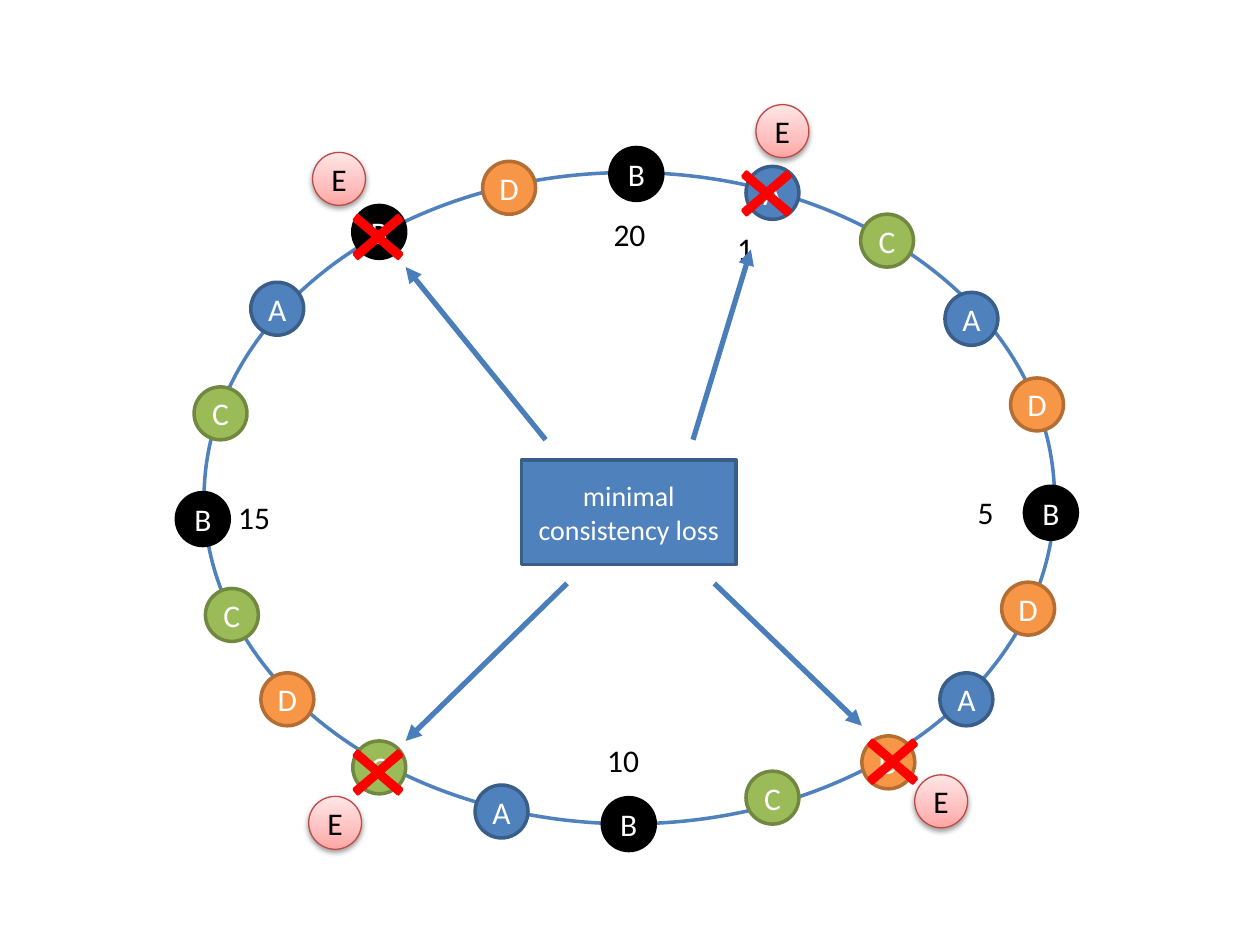
from copy import deepcopy
from typing import NamedTuple

from pptx import Presentation
from pptx import util as u
from pptx.dml.color import RGBColor
from pptx.enum import shapes, text
from pptx.oxml import ns, xmlchemy

WHITE = RGBColor(0xFF, 0xFF, 0xFF)
BLACK = RGBColor(0x00, 0x00, 0x00)
RED = RGBColor(0xFF, 0x00, 0x00)
BLUE = RGBColor(0x4F, 0x81, 0xBD)
BLUE_EDGE = RGBColor(0x3A, 0x5E, 0x8A)
GREEN = RGBColor(0x9B, 0xBB, 0x59)
GREEN_EDGE = RGBColor(0x71, 0x88, 0x41)
ORANGE = RGBColor(0xF7, 0x96, 0x46)
ORANGE_EDGE = RGBColor(0xB4, 0x6D, 0x33)
ARROW = RGBColor(0x4A, 0x7E, 0xBB)
PINK_EDGE = RGBColor(0xBE, 0x4B, 0x48)
PINK_STOPS = [
    (0, RGBColor(0xFF, 0xA5, 0xA3)),
    (0.35, RGBColor(0xFF, 0xBF, 0xBE)),
    (1, RGBColor(0xFF, 0xE6, 0xE6)),
]

FONT = "Calibri"
NODE_SIZE = 30.24
INSET = 3.6


class Node(NamedTuple):
    """A server or joining server, placed by its centre."""
    name: str
    x: float
    y: float


class Label(NamedTuple):
    """A ring position number, placed by its top left corner."""
    number: str
    left: float
    top: float
    width: float


class Arrow(NamedTuple):
    start: tuple[float, float]
    end: tuple[float, float]


NODE_COLORS = {
    "A": (BLUE, BLUE_EDGE),
    "B": (BLACK, BLACK),
    "C": (GREEN, GREEN_EDGE),
    "D": (ORANGE, ORANGE_EDGE),
}
# Clockwise from position 1
RING_NODES = [
    Node("A", 441.4, 110.2), Node("C", 506.9, 137.5), Node("A", 555.1, 182.2),
    Node("D", 592.6, 231.1), Node("B", 600.5, 293), Node("D", 587.5, 347.8),
    Node("A", 552.2, 399.6), Node("D", 507.6, 435.6), Node("C", 441.4, 455.8),
    Node("B", 359.3, 470.9), Node("A", 286.6, 463.7), Node("C", 216.7, 438.5),
    Node("D", 164.2, 399.6), Node("C", 132.5, 351.4), Node("B", 115.9, 296.6),
    Node("C", 126, 236.2), Node("A", 158.4, 176.4), Node("B", 216.7, 132.5),
    Node("D", 290.9, 107.3), Node("B", 363.6, 99.4),
]
LABELS = [
    Label("1", 417.6, 127.4, 17.3), Label("5", 555.1, 277.9, 17.3),
    Label("10", 343.4, 419.8, 27.4), Label("15", 132.5, 280.8, 27.4),
    Label("20", 347, 119.5, 27.4),
]
JOINING_NODES = [
    Node("E", 447.1, 74.9), Node("E", 537.8, 457.9),
    Node("E", 191.5, 470.2), Node("E", 193.7, 102.2),
]
CROSS_CENTRES = [(216, 135.4), (438.1, 110.5), (216, 441.4), (510.1, 435.2)]
HALF_CROSS = [(-13.6, -9.6), (-11.5, -12.2), (0, -2.2),
              (11.5, -12.2), (13.6, -9.6), (2.2, 0)]
CROSS = HALF_CROSS + [(-x, -y) for x, y in HALF_CROSS]
ARROWS = [
    Arrow((311.8, 251.3), (231.8, 152.6)), Arrow((396, 251.3), (429.1, 142.6)),
    Arrow((324, 333.4), (231.8, 423.4)), Arrow((408.2, 333.4), (492.5, 414.7)),
]


def add_child(parent, tag: str, **attributes: str):
    child = xmlchemy.OxmlElement(tag)
    for key, value in attributes.items():
        child.set(key, value)
    parent.append(child)
    return child


def write(shape, words: str, size: float, color: RGBColor,
          align=text.PP_ALIGN.CENTER, inset: float = INSET, wrap: bool = False) -> None:
    frame = shape.text_frame
    frame.text = words
    frame.word_wrap = wrap
    frame.margin_left = frame.margin_right = u.Pt(inset)
    frame.margin_top = frame.margin_bottom = u.Pt(inset)
    para = frame.paragraphs[0]
    para.alignment = align
    font = para.runs[0].font
    font.name, font.size, font.color.rgb = FONT, u.Pt(size), color


def paint(shape, fill: RGBColor, edge: RGBColor, width: float = 2) -> None:
    shape.shadow.inherit = False
    shape.fill.solid()
    shape.fill.fore_color.rgb = fill
    shape.line.color.rgb = edge
    shape.line.width = u.Pt(width)


def add_circle(page, node: Node, color: RGBColor):
    corner = u.Pt(node.x - NODE_SIZE / 2), u.Pt(node.y - NODE_SIZE / 2)
    circle = page.shapes.add_shape(
        shapes.MSO_SHAPE.OVAL, *corner, u.Pt(NODE_SIZE), u.Pt(NODE_SIZE))
    write(circle, node.name, 18, color, inset=0)
    circle.text_frame.vertical_anchor = text.MSO_ANCHOR.MIDDLE
    return circle


def add_joining_node(page, node: Node) -> None:
    circle = add_circle(page, node, BLACK)
    paint(circle, WHITE, PINK_EDGE, 0.75)
    # Three-stop gradient, darkest at the bottom
    circle.fill.gradient()
    circle.fill.gradient_angle = 90
    properties = circle.element.spPr
    stop_list = properties.find(ns.qn("a:gradFill")).find(ns.qn("a:gsLst"))
    stop_list.append(deepcopy(stop_list[0]))
    for stop, (position, color) in zip(circle.fill.gradient_stops, PINK_STOPS):
        stop.position = position
        stop.color.rgb = color
    # Soft shadow below
    shadow = add_child(properties.find(ns.qn("a:effectLst")), "a:outerShdw",
                       blurRad=str(u.Pt(3)), dist=str(u.Pt(1.6)),
                       dir="5400000", rotWithShape="0")
    shade = add_child(shadow, "a:srgbClr", val=str(BLACK))
    add_child(shade, "a:alpha", val="38000")


def add_label(page, label: Label) -> None:
    box = page.shapes.add_textbox(
        u.Pt(label.left), u.Pt(label.top), u.Pt(label.width), u.Pt(28.1))
    write(box, label.number, 18, BLACK, text.PP_ALIGN.LEFT)


def add_cross(page, x: float, y: float) -> None:
    points = [(u.Pt(x + dx), u.Pt(y + dy)) for dx, dy in CROSS]
    builder = page.shapes.build_freeform(*points[0])
    builder.add_line_segments(points[1:], close=True)
    paint(builder.convert_to_shape(), RED, RED)


def add_arrow(page, arrow: Arrow) -> None:
    ends = [u.Pt(value) for value in arrow.start + arrow.end]
    line = page.shapes.add_connector(shapes.MSO_CONNECTOR.STRAIGHT, *ends)
    line.line.color.rgb = ARROW
    line.line.width = u.Pt(3)
    add_child(line.line._get_or_add_ln(), "a:tailEnd", type="triangle")
    add_child(line.element.spPr, "a:effectLst")


def main() -> None:
    deck = Presentation()
    deck.slide_width, deck.slide_height = u.Pt(720), u.Pt(540)
    page = deck.slides.add_slide(deck.slide_layouts[6])

    # Ring with its servers and position numbers
    ring = page.shapes.add_shape(shapes.MSO_SHAPE.OVAL, u.Pt(116.6), u.Pt(98.6),
                                 u.Pt(486), u.Pt(372.2))
    paint(ring, WHITE, BLUE)
    for node in RING_NODES:
        paint(add_circle(page, node, WHITE), *NODE_COLORS[node.name])
    for label in LABELS:
        add_label(page, label)

    # Joining servers and the positions they take over
    for node in JOINING_NODES:
        add_joining_node(page, node)
    for centre in CROSS_CENTRES:
        add_cross(page, *centre)

    # Central message
    message = page.shapes.add_shape(shapes.MSO_SHAPE.RECTANGLE, u.Pt(298), u.Pt(262.8),
                                    u.Pt(122.6), u.Pt(59.8))
    paint(message, BLUE, BLUE_EDGE)
    write(message, "minimal consistency loss", 16, WHITE, wrap=True)
    message.text_frame.vertical_anchor = text.MSO_ANCHOR.MIDDLE
    for arrow in ARROWS:
        add_arrow(page, arrow)

    deck.save("out.pptx")


if __name__ == "__main__":
    main()
